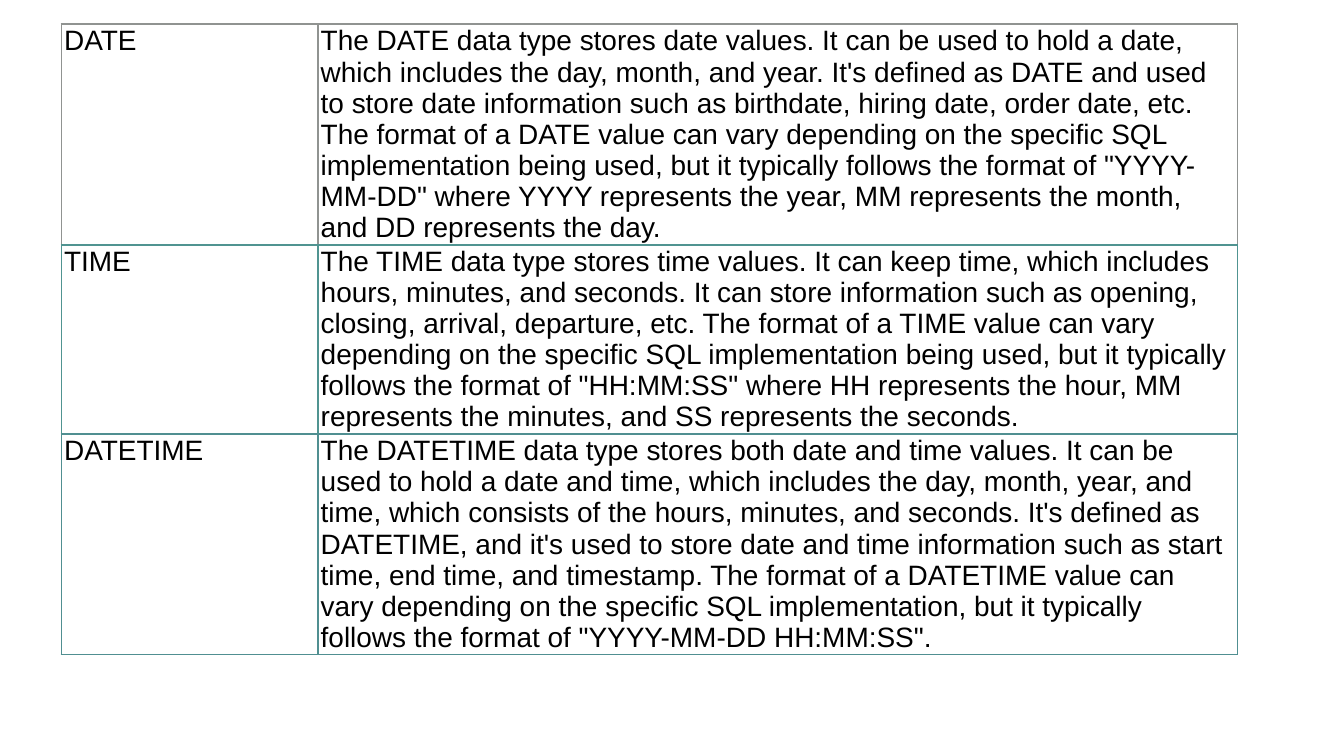
from lxml.etree import SubElement
from pptx import Presentation
from pptx.dml.color import RGBColor
from pptx.oxml.ns import qn
from pptx.util import Pt

COLORS = {
    "paper": "FFFFFF",
    "ink": "000000",
    "gray": "909391",
    "teal": "509491",
    "deep_teal": "508F91",
}
FONT = "Arial"
COLUMN_WIDTHS = (137.5, 492.5)

# Each row: height, side/top border, bottom border, type name, description
DATA_TYPES = [
    (90, "gray", "teal", "DATE",
     "The DATE data type stores date values. It can be used to hold a date, "
     "which includes the day, month, and year. It's defined as DATE and used "
     "to store date information such as birthdate, hiring date, order date, etc. "
     "The format of a DATE value can vary depending on the specific SQL "
     "implementation being used, but it typically follows the format of "
     "\"YYYY-MM-DD\" where YYYY represents the year, MM represents the month, "
     "and DD represents the day."),
    (86.4, "teal", "deep_teal", "TIME",
     "The TIME data type stores time values. It can keep time, which includes "
     "hours, minutes, and seconds. It can store information such as opening, "
     "closing, arrival, departure, etc. The format of a TIME value can vary "
     "depending on the specific SQL implementation being used, but it typically "
     "follows the format of \"HH:MM:SS\" where HH represents the hour, MM "
     "represents the minutes, and SS represents the seconds."),
    (92.9, "deep_teal", "deep_teal", "DATETIME",
     "The DATETIME data type stores both date and time values. It can be used "
     "to hold a date and time, which includes the day, month, year, and time, "
     "which consists of the hours, minutes, and seconds. It's defined "
     "as DATETIME, and it's used to store date and time information such as "
     "start time, end time, and timestamp. The format of a DATETIME value can "
     "vary depending on the specific SQL implementation, but it typically "
     "follows the format of \"YYYY-MM-DD HH:MM:SS\"."),
]


def color(name):
    return RGBColor.from_string(COLORS[name])


def set_borders(cell, edge, bottom):
    """Draw the four cell borders; they must precede the fill in the XML."""
    properties = cell._tc.get_or_add_tcPr()
    sides = (("lnL", edge), ("lnR", edge), ("lnT", edge), ("lnB", bottom))
    for position, (side, name) in enumerate(sides):
        line = SubElement(properties, qn(f"a:{side}"), w=str(Pt(1)))
        fill = SubElement(line, qn("a:solidFill"))
        SubElement(fill, qn("a:srgbClr"), val=COLORS[name])
        properties.insert(position, line)


def fill_cell(cell, text, edge, bottom):
    cell.margin_left = cell.margin_right = Pt(1.44)
    cell.margin_top = cell.margin_bottom = Pt(0.72)
    cell.fill.solid()
    cell.fill.fore_color.rgb = color("paper")
    span = cell.text_frame.paragraphs[0].add_run()
    span.text = text
    span.font.name = FONT
    span.font.size = Pt(15)
    span.font.bold = False
    span.font.color.rgb = color("ink")
    set_borders(cell, edge, bottom)


def add_type_table(page, left, top, width, height):
    frame = page.shapes.add_table(len(DATA_TYPES), len(COLUMN_WIDTHS),
                                  Pt(left), Pt(top), Pt(width), Pt(height))
    table = frame.table
    table.first_row = table.horz_banding = False
    for column, column_width in zip(table.columns, COLUMN_WIDTHS):
        column.width = Pt(column_width)
    for row, (row_height, edge, bottom, *texts) in zip(table.rows, DATA_TYPES):
        row.height = Pt(row_height)
        for cell, text in zip(row.cells, texts):
            fill_cell(cell, text, edge, bottom)
    # Row heights reset the frame, so its full height is set last
    frame.height = Pt(height)


def main():
    deck = Presentation()
    deck.slide_width, deck.slide_height = Pt(720), Pt(405)
    page = deck.slides.add_slide(deck.slide_layouts[6])

    # Page background
    page.background.fill.solid()
    page.background.fill.fore_color.rgb = color("paper")

    # Table of SQL date and time types
    add_type_table(page, 32.9, 13, sum(COLUMN_WIDTHS), 364.3)
    deck.save("out.pptx")


if __name__ == "__main__":
    main()
